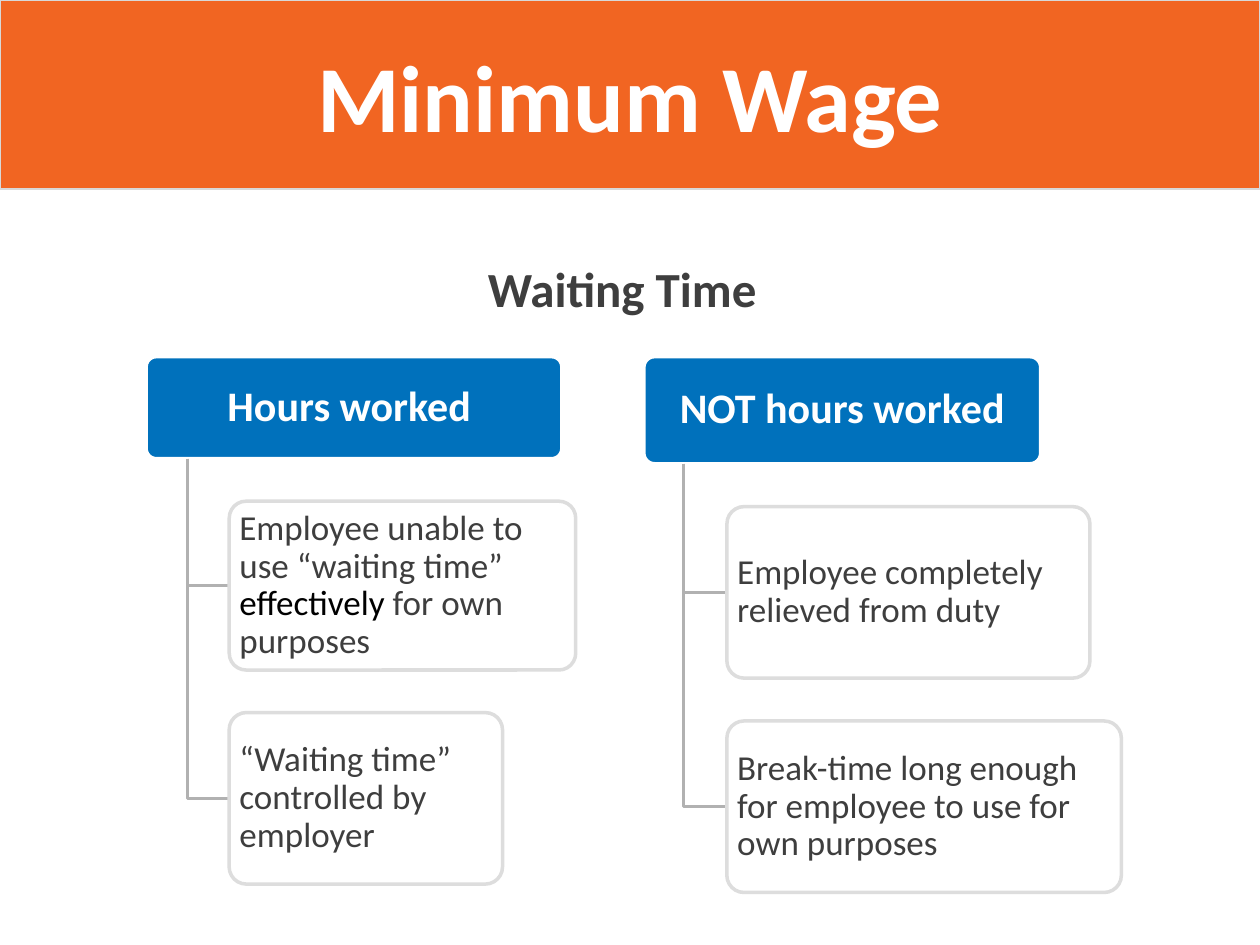
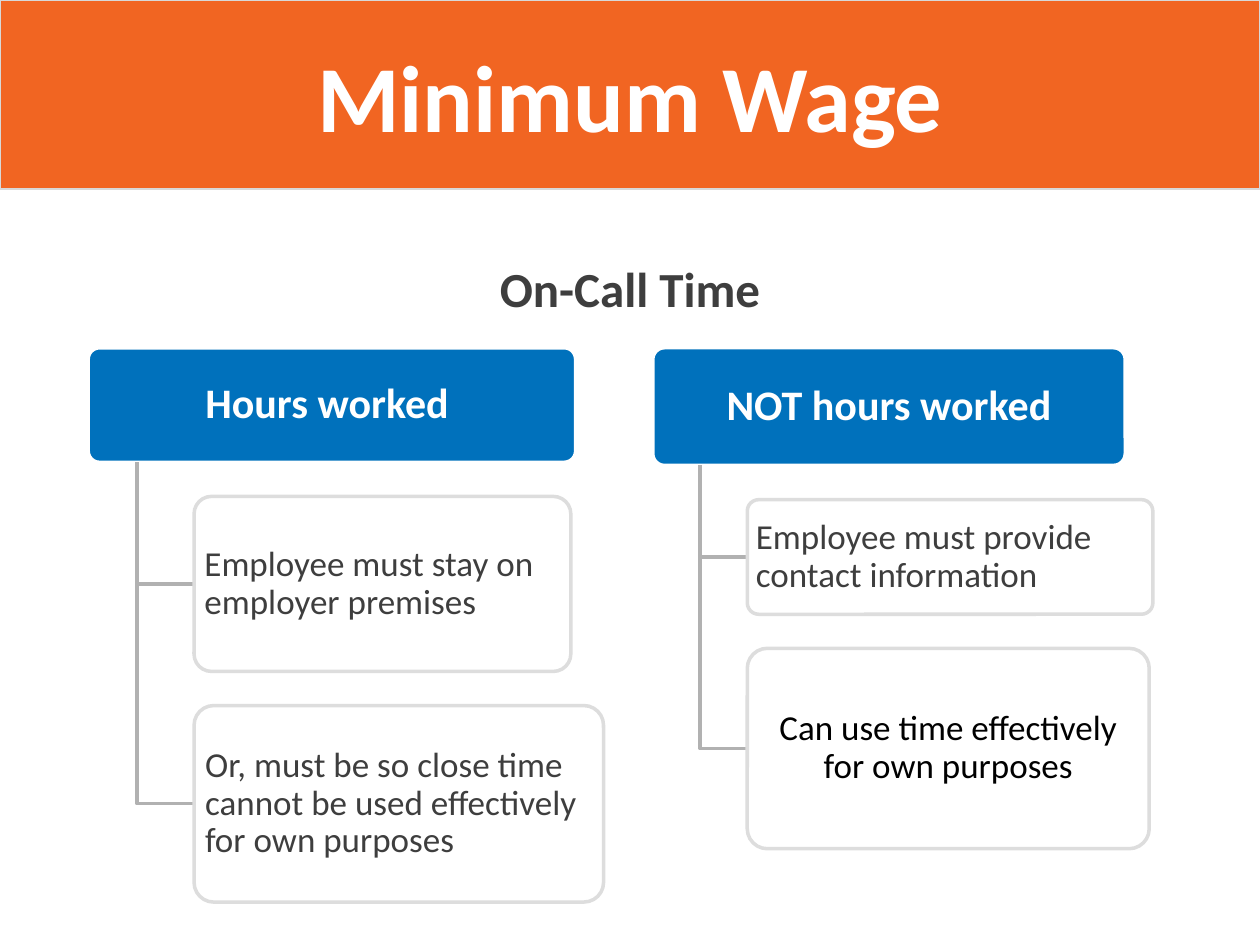
from dataclasses import dataclass

from pptx import Presentation
from pptx.dml.color import RGBColor
from pptx.enum.shapes import MSO_SHAPE
from pptx.enum.text import MSO_ANCHOR, PP_ALIGN
from pptx.util import Pt

ORANGE = RGBColor(0xF1, 0x65, 0x22)
BLUE = RGBColor(0x00, 0x71, 0xBC)
WHITE = RGBColor(0xFF, 0xFF, 0xFF)
BLACK = RGBColor(0x00, 0x00, 0x00)
DARK_GRAY = RGBColor(0x3E, 0x3E, 0x3E)
BRANCH_GRAY = RGBColor(0xB1, 0xB1, 0xB1)
BORDER_GRAY = RGBColor(0xDD, 0xDD, 0xDD)
BAND_BORDER = RGBColor(0xD8, 0xD8, 0xD8)

SLIDE_WIDTH, SLIDE_HEIGHT, BAND_HEIGHT = 720, 540, 108
CORNER = 0.1

TITLE_FONT = {"name": "Calibri", "size": Pt(54), "bold": True}
TOPIC_FONT = {"name": "Calibri", "size": Pt(28), "bold": True}
HEADING_FONT = {"name": "Calibri", "size": Pt(24), "bold": True}
ITEM_FONT = {"name": "Calibri", "size": Pt(20), "bold": False}
BOX_FRAME = {
    "word_wrap": True,
    "vertical_anchor": MSO_ANCHOR.MIDDLE,
    "margin_left": Pt(3),
    "margin_right": Pt(3),
    "margin_top": Pt(2),
    "margin_bottom": Pt(2),
}


@dataclass
class Item:
    width: float
    height: float
    runs: list
    alignment: PP_ALIGN = PP_ALIGN.LEFT


@dataclass
class Branch:
    """A heading with items stacked below it at equal gaps."""
    heading: str
    left: float
    top: float
    width: float
    height: float
    item_left: float
    gap: float
    items: list


def set_attributes(target, values):
    for name, value in values.items():
        setattr(target, name, value)


class Deck:
    """Holds the shared style and the slide being drawn."""

    def __init__(self):
        self.presentation = Presentation()
        self.presentation.slide_width = Pt(SLIDE_WIDTH)
        self.presentation.slide_height = Pt(SLIDE_HEIGHT)
        self.slide = None

    def new_slide(self, title):
        layout = self.presentation.slide_layouts[6]
        self.slide = self.presentation.slides.add_slide(layout)
        band = self.box(MSO_SHAPE.RECTANGLE, (0, 0, SLIDE_WIDTH, BAND_HEIGHT),
                        ORANGE, BAND_BORDER, 0.75)
        self.add_text(band, [(title, WHITE)], TITLE_FONT)

    def box(self, kind, bounds, fill, border, border_width=2):
        shape = self.slide.shapes.add_shape(kind, *map(Pt, bounds))
        shape.shadow.inherit = False
        shape.fill.solid()
        shape.fill.fore_color.rgb = fill
        shape.line.color.rgb = border
        shape.line.width = Pt(border_width)
        set_attributes(shape.text_frame, BOX_FRAME)
        return shape

    def rounded_box(self, bounds, fill, border):
        shape = self.box(MSO_SHAPE.ROUNDED_RECTANGLE, bounds, fill, border)
        shape.adjustments[0] = CORNER
        return shape

    def add_text(self, shape, runs, font, alignment=PP_ALIGN.CENTER, spacing=1.0):
        paragraph = shape.text_frame.paragraphs[0]
        paragraph.alignment = alignment
        paragraph.line_spacing = spacing
        for text, color in runs:
            run = paragraph.add_run()
            run.text = text
            set_attributes(run.font, font)
            run.font.color.rgb = color

    def topic(self, text, left, width):
        box = self.slide.shapes.add_textbox(Pt(left), Pt(144), Pt(width), Pt(41))
        box.text_frame.word_wrap = True
        self.add_text(box, [(text, DARK_GRAY)], TOPIC_FONT)

    def elbow(self, stem, top, end, middle):
        """Draw a line down the stem, then across to an item."""
        builder = self.slide.shapes.build_freeform(Pt(stem), Pt(top))
        builder.add_line_segments(
            [(Pt(stem), Pt(middle)), (Pt(end), Pt(middle))], close=False)
        line = builder.convert_to_shape()
        line.shadow.inherit = False
        line.fill.background()
        line.line.color.rgb = BRANCH_GRAY
        line.line.width = Pt(2)

    def branch(self, branch):
        heading = self.rounded_box(
            (branch.left, branch.top, branch.width, branch.height), BLUE, WHITE)
        self.add_text(heading, [(branch.heading, WHITE)], HEADING_FONT, spacing=0.9)
        stem = branch.left + branch.width / 10
        bottom = branch.top + branch.height
        item_top = bottom + branch.gap
        for item in branch.items:
            self.elbow(stem, bottom, branch.item_left, item_top + item.height / 2)
            box = self.rounded_box(
                (branch.item_left, item_top, item.width, item.height),
                WHITE, BORDER_GRAY)
            self.add_text(box, item.runs, ITEM_FONT, item.alignment, 0.9)
            item_top += item.height + branch.gap


WAITING_TIME = [
    Branch("Hours worked ", 83.5, 203.8, 237.6, 58.3, 131, 24.3, [
        Item(198, 96.5, [("Employee unable to use “waiting time” ", DARK_GRAY),
                         ("effectively ", BLACK),
                         ("for own purposes", DARK_GRAY)]),
        Item(156.2, 98, [("“Waiting time” controlled by employer", DARK_GRAY)]),
    ]),
    Branch("NOT hours worked", 367.9, 203.8, 226.8, 61.2, 415.4, 24.5, [
        Item(207.4, 98, [("Employee completely relieved from duty", DARK_GRAY)]),
        Item(225.4, 98, [("Break-time long enough for employee to use for "
                          "own purposes", DARK_GRAY)]),
    ]),
]
ON_CALL_TIME = [
    Branch("Hours worked ", 50.4, 198.7, 278.6, 65.5, 110.9, 19.5, [
        Item(215.3, 100, [("Employee must stay on employer premises", DARK_GRAY)]),
        Item(234, 112.3, [("Or, must be so close time cannot be used effectively "
                           "for own purposes", DARK_GRAY)]),
    ]),
    Branch("NOT hours worked", 373, 198.7, 270, 67.3, 427, 19.5, [
        Item(231.8, 65.5, [("Employee must provide contact information", DARK_GRAY)]),
        Item(229.7, 114.5, [("Can use time effectively for own purposes", BLACK)],
             PP_ALIGN.CENTER),
    ]),
]
SLIDES = [
    ("Waiting Time", 232, 247, WAITING_TIME),
    ("On-Call Time", 242, 236, ON_CALL_TIME),
]


def main():
    deck = Deck()
    for topic, left, width, branches in SLIDES:
        deck.new_slide("Minimum Wage")
        deck.topic(topic, left, width)
        for branch in branches:
            deck.branch(branch)
    deck.presentation.save("out.pptx")


if __name__ == "__main__":
    main()
